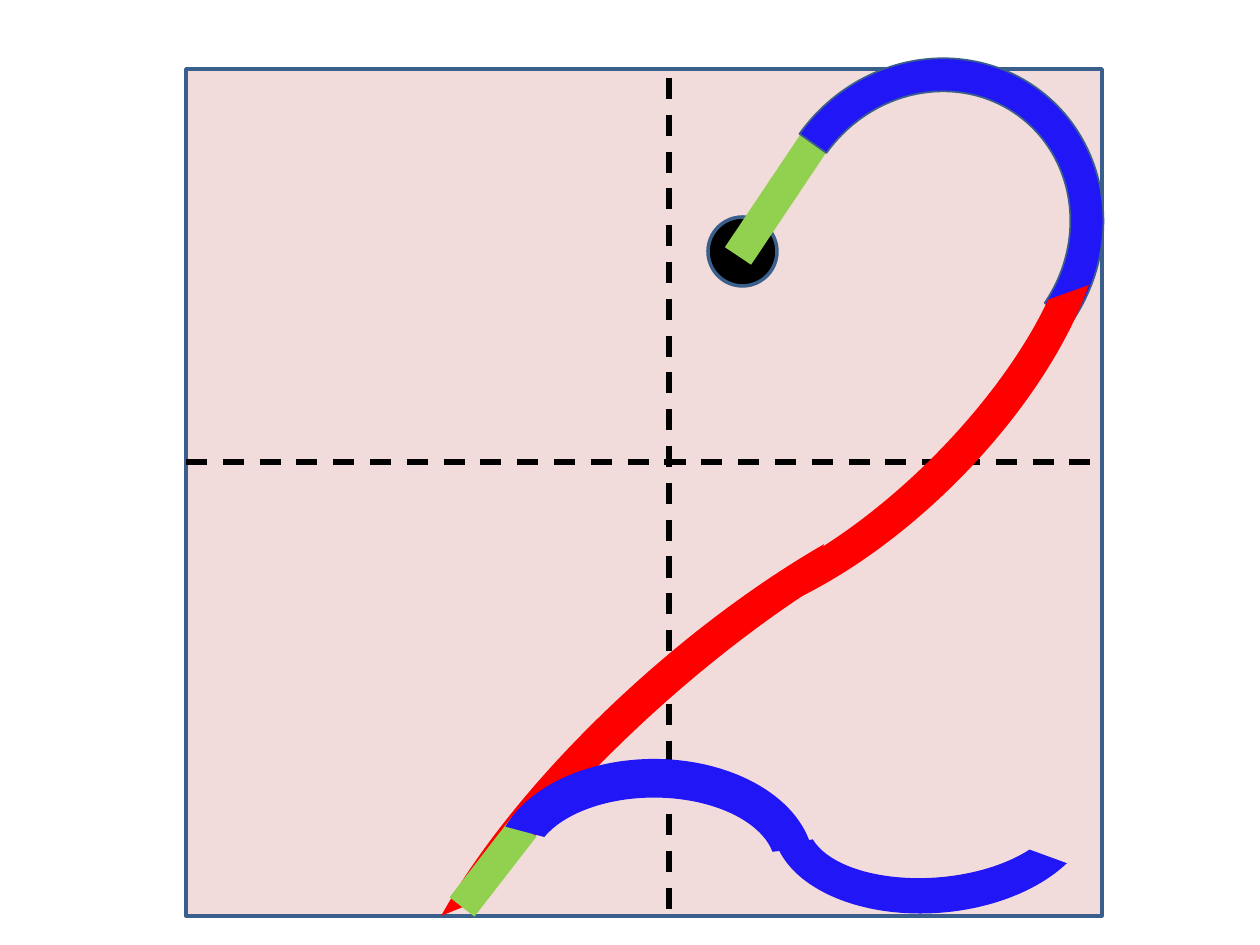
from lxml.etree import SubElement
from pptx import Presentation
from pptx.dml.color import RGBColor
from pptx.enum.dml import MSO_LINE as Dash
from pptx.enum.shapes import MSO_CONNECTOR as Connector, MSO_SHAPE as Shape
from pptx.oxml.ns import qn
from pptx.util import Emu, Pt

EMU_PER_PX = 914400 / 126
COLORS = {
    "panel": "F2DCDB",
    "outline": "3A5F8C",
    "black": "000000",
    "green": "92D050",
    "blue": "2116F6",
    "red": "FF0000",
}


def px(length):
    return Emu(round(length * EMU_PER_PX))


def color(name):
    return RGBColor.from_string(COLORS[name])


def add_filled(page, kind, box, fill, outline=0, rotation=0, adjustments=()):
    """Add a preset shape; outline is a width in points, 0 for none."""
    shape = page.shapes.add_shape(kind, *map(px, box))
    shape.shadow.inherit = False
    shape.rotation = rotation
    for index, value in enumerate(adjustments):
        shape.adjustments[index] = value
    shape.fill.solid()
    shape.fill.fore_color.rgb = color(fill)
    if outline:
        shape.line.color.rgb = color("outline")
        shape.line.width = Pt(outline)
    else:
        shape.line.fill.background()
    return shape


def add_line(page, start, end, stroke, width, dash=None):
    line = page.shapes.add_connector(Connector.STRAIGHT, *map(px, start + end))
    line.line.color.rgb = color(stroke)
    line.line.width = Pt(width)
    if dash:
        line.line.dash_style = dash
    SubElement(line._element.spPr, qn("a:effectLst"))
    return line


def add_arc(page, box, fill, adjustments, rotation=0, outline=0):
    return add_filled(page, Shape.BLOCK_ARC, box, fill, outline, rotation, adjustments)


def main():
    deck = Presentation()
    deck.slide_width, deck.slide_height = px(1260), px(945)
    page = deck.slides.add_slide(deck.slide_layouts[6])

    # Panel with its dashed axes
    left, top, width, height = panel = (186, 69, 916, 847)
    right, bottom = left + width, top + height
    add_filled(page, Shape.RECTANGLE, panel, "panel", outline=2)
    add_line(page, (left, 462), (right, 462), "black", 3, Dash.DASH)
    add_line(page, (669, 78), (669, bottom), "black", 3, Dash.DASH)

    # Starting dot, first straight piece and upper bend
    add_filled(page, Shape.OVAL, (708, 217, 69, 69), "black", outline=2)
    add_line(page, (813, 144), (738, 256), "green", 18)
    add_arc(page, (769, 55, 331, 349), "blue", (106.74, 213.77, 0.1),
            rotation=37.4, outline=1)

    # Long diagonal sweep
    add_arc(page, (517, 217, 658, 311), "red", (123.05, 197.22, 0.11), rotation=135.1)
    add_arc(page, (307, 636, 881, 311), "red", (119.64, 197.22, 0.11), rotation=318.5)

    # Second straight piece and closing wave
    add_line(page, (524, 827), (462, 907), "green", 18)
    add_arc(page, (494, 759, 320, 215), "blue", (116.99, 211.79, 0.18))
    add_arc(page, (772, 716, 323, 197), "blue", (122.79, 211.79, 0.18), rotation=175.4)

    deck.save("out.pptx")


if __name__ == "__main__":
    main()
